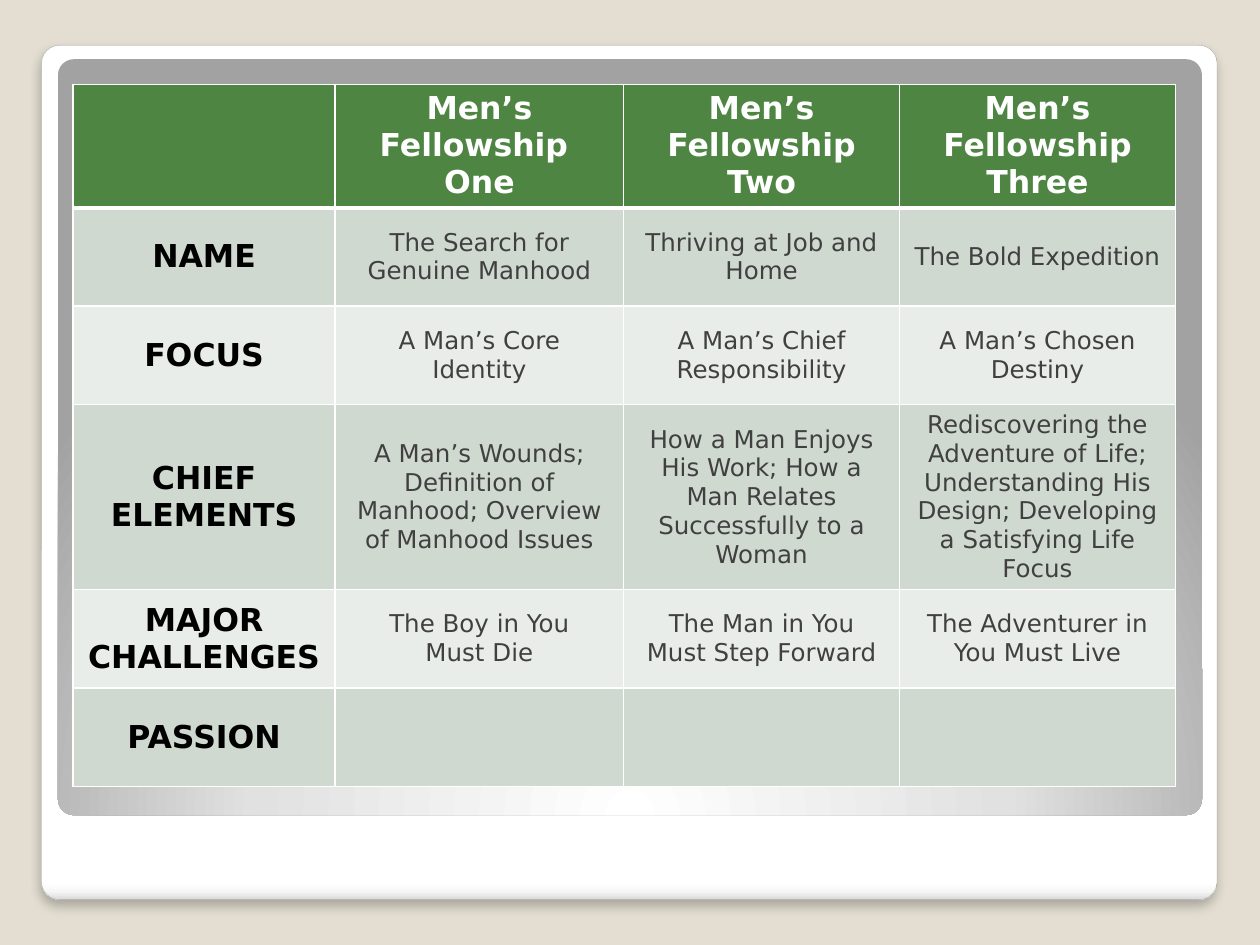
"""Build the slide that compares the three Men’s Fellowship years in a table."""
from pptx import Presentation
from pptx.dml.color import RGBColor
from pptx.enum.shapes import MSO_SHAPE
from pptx.enum.text import MSO_ANCHOR, PP_ALIGN
from pptx.oxml import parse_xml
from pptx.oxml.ns import nsdecls, qn
from pptx.util import Inches, Pt

FONT = "DejaVu Sans"
WHITE, BLACK, GREY = "FFFFFF", "000000", "404040"
GREEN, SAGE, PALE = "4E8542", "D0D9CF", "E9EDE9"


def color(hex_code):
    """Turn a hex string into a colour."""
    return RGBColor.from_string(hex_code)


def write(text_frame, text, size=14, font_color=GREY, bold=False):
    """Write centred text, one paragraph per line."""
    text_frame.text = text
    for paragraph in text_frame.paragraphs:
        paragraph.alignment = PP_ALIGN.CENTER
        paragraph.font.name = FONT
        paragraph.font.size = Pt(size)
        paragraph.font.bold = bold
        paragraph.font.color.rgb = color(font_color)


presentation = Presentation()
presentation.slide_width, presentation.slide_height = Inches(10), Inches(7.5)
slide = presentation.slides.add_slide(presentation.slide_layouts[6])
slide.background.fill.solid()
slide.background.fill.fore_color.rgb = color("E3DED1")

linear = '<a:lin ang="5400000" scaled="0"/>'
circular = ('<a:path path="circle"><a:fillToRect l="50000" t="175000" '
            'r="50000" b="-75000"/></a:path>')
panels = [
    ((0.33, 0.36, 9.33, 6.78), linear,
     [(0, WHITE), (98, WHITE), (99, "F7F7F7"), (100, "DADADA")]),
    ((0.46, 0.47, 9.08, 6), circular,
     [(0, WHITE), (55, "E1E1E1"), (100, "A2A2A2")]),
]
panel_shapes = []
for box, direction, stops in panels:
    panel = slide.shapes.add_shape(MSO_SHAPE.ROUNDED_RECTANGLE, *map(Inches, box))
    panel.adjustments[0] = 0.021
    panel.shadow.inherit = False
    panel.line.fill.background()
    panel.fill.background()
    stop_xml = "".join(f'<a:gs pos="{position * 1000}"><a:srgbClr val="{stop}"/></a:gs>'
                       for position, stop in stops)
    properties = panel.element.spPr
    properties.replace(properties.find(qn("a:noFill")), parse_xml(
        f'<a:gradFill {nsdecls("a")} rotWithShape="1"><a:gsLst>{stop_xml}</a:gsLst>'
        f'{direction}</a:gradFill>'))
    panel_shapes.append(panel)

card = panel_shapes[0]
card.line.color.rgb = color("A4A4A4")
card.line.width = Pt(0.16)
card.element.spPr.find(qn("a:effectLst")).append(parse_xml(
    f'<a:outerShdw {nsdecls("a")} blurRad="{Pt(6)}" dist="{Pt(4)}" dir="5400000" '
    f'algn="t" rotWithShape="0"><a:srgbClr val="{BLACK}"><a:alpha val="25000"/>'
    '</a:srgbClr></a:outerShdw>'))

rows = [
    ("", "Men’s Fellowship \nOne", "Men’s Fellowship\nTwo", "Men’s Fellowship\nThree"),
    ("NAME", "The Search for Genuine Manhood", "Thriving at Job and Home",
     "The Bold Expedition"),
    ("FOCUS", "A Man’s Core Identity", "A Man’s Chief Responsibility",
     "A Man’s Chosen Destiny"),
    ("CHIEF ELEMENTS",
     "A Man’s Wounds; Definition of Manhood; Overview of Manhood Issues",
     "How a Man Enjoys His Work; How a Man Relates Successfully to a Woman",
     "Rediscovering the Adventure of Life; Understanding His Design; "
     "Developing a Satisfying Life Focus"),
    ("MAJOR CHALLENGES", "The Boy in You\nMust Die",
     "The Man in You Must Step Forward", "The Adventurer in You Must Live"),
    ("PASSION", "", "", ""),
]
column_widths = [2.08, 2.29, 2.19, 2.19]
row_heights = [0.98, 0.78, 0.78, 1.47, 0.78, 0.78]
table = slide.shapes.add_table(
    len(rows), len(column_widths), Inches(0.58), Inches(0.67),
    Inches(sum(column_widths)), Inches(sum(row_heights))).table
for column, width in zip(table.columns, column_widths):
    column.width = Inches(width)

for row_index, (texts, height) in enumerate(zip(rows, row_heights)):
    table.rows[row_index].height = Inches(height)
    is_header = row_index == 0
    for column_index, text in enumerate(texts):
        cell = table.cell(row_index, column_index)
        cell_properties = cell._tc.get_or_add_tcPr()
        for side in "LRTB":
            thick = (is_header and side == "B") or (row_index == 1 and side == "T")
            cell_properties.append(parse_xml(
                f'<a:ln{side} {nsdecls("a")} w="{Pt(3 if thick else 1)}"><a:solidFill>'
                f'<a:srgbClr val="{WHITE}"/></a:solidFill></a:ln{side}>'))
        cell.fill.solid()
        cell.fill.fore_color.rgb = color(GREEN if is_header else SAGE if row_index % 2 else PALE)
        cell.vertical_anchor = MSO_ANCHOR.TOP if is_header else MSO_ANCHOR.MIDDLE
        if is_header:
            write(cell.text_frame, text, size=18, font_color=WHITE, bold=True)
        elif column_index == 0:
            write(cell.text_frame, text, size=18, font_color=BLACK, bold=True)
        else:
            write(cell.text_frame, text)

presentation.save("out.pptx")
